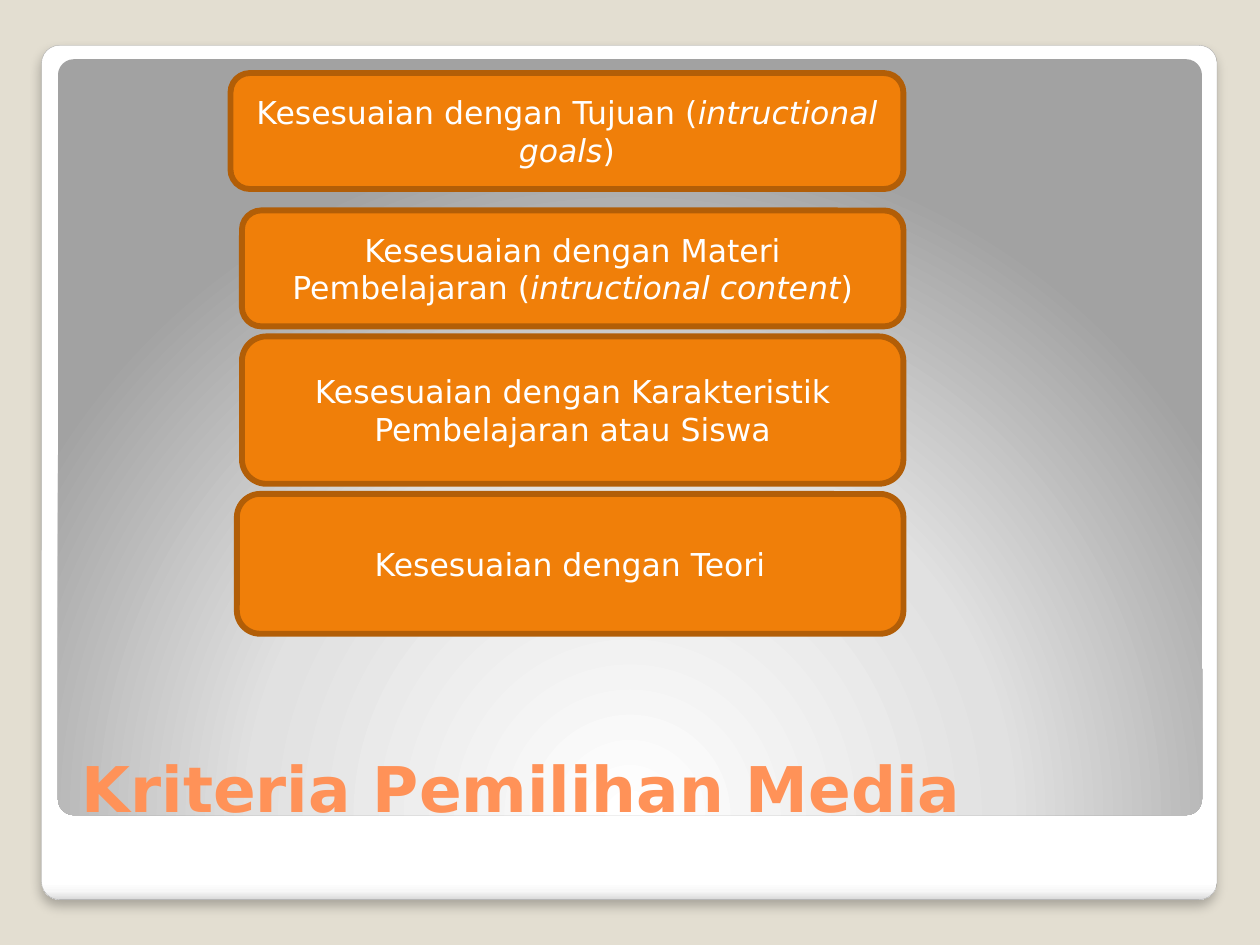
from lxml.etree import SubElement
from pptx import Presentation
from pptx.dml.color import RGBColor
from pptx.enum.shapes import MSO_SHAPE
from pptx.enum.text import MSO_ANCHOR, PP_ALIGN
from pptx.oxml import parse_xml
from pptx.oxml.ns import nsdecls, qn
from pptx.util import Inches, Pt

FONT = "DejaVu Sans"
TITLE = "Kriteria Pemilihan Media"
RIGHT_EDGE = 7.17
# left, top, height, text pieces (every second piece is italic)
CRITERIA = [
    (1.83, 0.58, 0.92, ["Kesesuaian dengan Tujuan (", "intructional goals", ")"]),
    (1.92, 1.67, 0.92, ["Kesesuaian dengan Materi Pembelajaran (",
                        "intructional content", ")"]),
    (1.92, 2.67, 1.17, ["Kesesuaian dengan Karakteristik Pembelajaran atau Siswa"]),
    (1.88, 3.92, 1.11, ["Kesesuaian dengan Teori"]),
]
FRAME_STOPS = [(0, "FFFFFF"), (98, "FFFFFF"), (99, "F7F7F7"), (100, "DADADA")]
PANEL_STOPS = [(0, "FFFFFF"), (55, "E1E1E1"), (100, "A2A2A2")]
DOWNWARD = '<a:lin ang="5400000" scaled="0"/>'
FROM_BELOW = ('<a:path path="circle"><a:fillToRect l="50000" t="175000" '
              'r="50000" b="-75000"/></a:path>')


def color(value):
    return RGBColor.from_string(value)


def add_round_box(left, top, width, height, corner=None):
    box = slide.shapes.add_shape(MSO_SHAPE.ROUNDED_RECTANGLE, Inches(left),
                                 Inches(top), Inches(width), Inches(height))
    box.shadow.inherit = False
    if corner is not None:
        box.adjustments[0] = corner
    return box


def set_line(box, value, width):
    box.line.color.rgb = color(value)
    box.line.width = Pt(width)


def set_gradient(box, stops, direction):
    marks = "".join(f'<a:gs pos="{pos * 1000}"><a:srgbClr val="{value}"/></a:gs>'
                    for pos, value in stops)
    box.fill.solid()
    properties = box.element.spPr
    properties.replace(
        properties.find(qn("a:solidFill")),
        parse_xml(f'<a:gradFill {nsdecls("a")} rotWithShape="1">'
                  f'<a:gsLst>{marks}</a:gsLst>{direction}</a:gradFill>'))


def add_drop_shadow(box):
    effects = box.element.spPr.find(qn("a:effectLst"))
    shadow = SubElement(effects, qn("a:outerShdw"), blurRad=str(Pt(6)),
                        dist=str(Pt(4)), dir="5400000", algn="t", rotWithShape="0")
    tint = SubElement(shadow, qn("a:srgbClr"), val="000000")
    SubElement(tint, qn("a:alpha"), val="25000")


def add_run(paragraph, text, size, value, bold=False, italic=False):
    run = paragraph.add_run()
    run.text = text
    run.font.name = FONT
    run.font.size = Pt(size)
    run.font.color.rgb = color(value)
    run.font.bold = bold
    run.font.italic = italic


prs = Presentation()
prs.slide_width, prs.slide_height = Inches(10), Inches(7.5)
slide = prs.slides.add_slide(prs.slide_layouts[6])
slide.background.fill.solid()
slide.background.fill.fore_color.rgb = color("E3DED1")

frame = add_round_box(0.33, 0.36, 9.33, 6.78, corner=0.021)
set_gradient(frame, FRAME_STOPS, DOWNWARD)
set_line(frame, "A4A4A4", 0.16)
add_drop_shadow(frame)

panel = add_round_box(0.46, 0.47, 9.08, 6, corner=0.021)
set_gradient(panel, PANEL_STOPS, FROM_BELOW)
panel.line.fill.background()

title = slide.shapes.add_textbox(Inches(0.55), Inches(5.45),
                                 Inches(8.95), Inches(1.15)).text_frame
title.word_wrap = True
title.vertical_anchor = MSO_ANCHOR.BOTTOM
add_run(title.paragraphs[0], TITLE, 36, "FF9258", bold=True)

for left, top, height, pieces in CRITERIA:
    criterion = add_round_box(left, top, RIGHT_EDGE - left, height)
    criterion.fill.solid()
    criterion.fill.fore_color.rgb = color("F07F09")
    set_line(criterion, "B25E07", 3.35)
    criterion.text_frame.word_wrap = True
    criterion.text_frame.vertical_anchor = MSO_ANCHOR.MIDDLE
    paragraph = criterion.text_frame.paragraphs[0]
    paragraph.alignment = PP_ALIGN.CENTER
    for index, piece in enumerate(pieces):
        add_run(paragraph, piece, 18, "FFFFFF", italic=index % 2 == 1)

prs.save("out.pptx")
